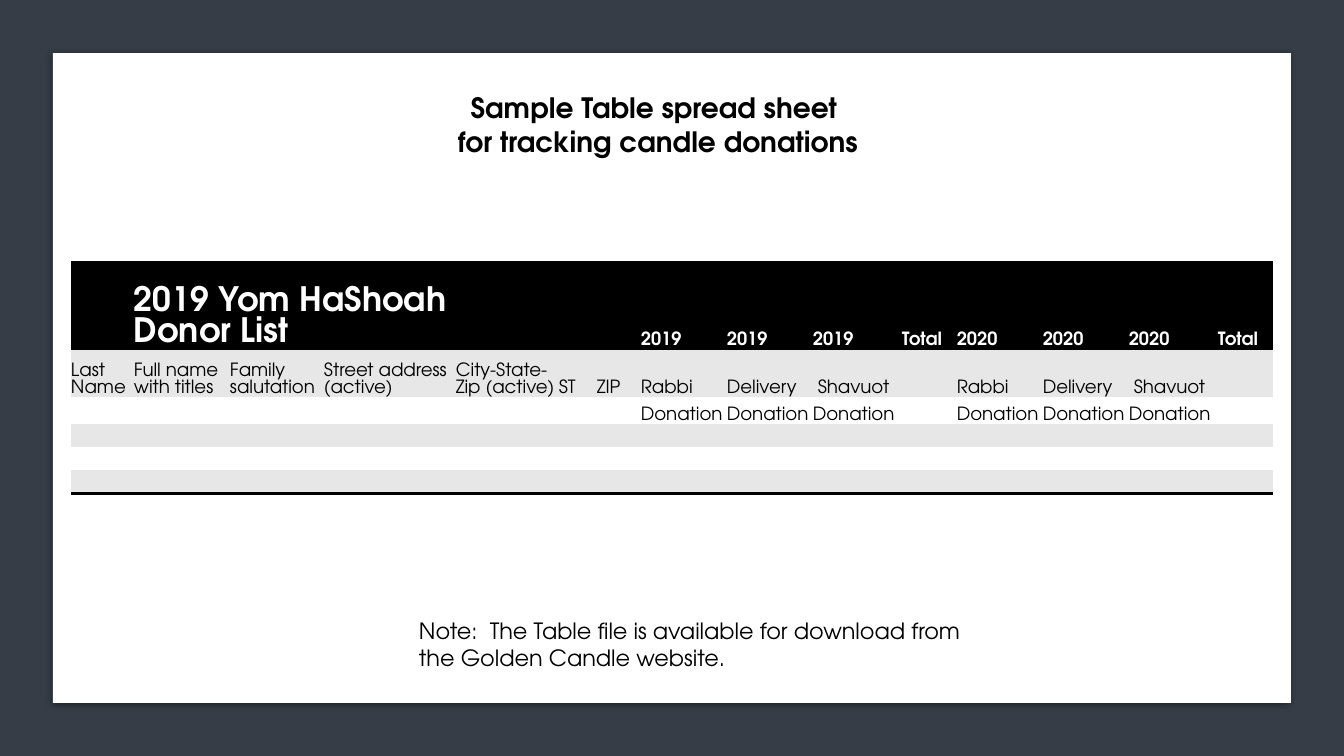
from dataclasses import dataclass

from lxml.etree import Element, SubElement
from pptx import Presentation
from pptx.dml.color import RGBColor
from pptx.enum.shapes import MSO_SHAPE as Shape
from pptx.enum.text import MSO_ANCHOR as Anchor, PP_ALIGN as Align
from pptx.oxml.ns import qn
from pptx.util import Emu, Pt


@dataclass(frozen=True)
class Theme:
    font: str = "TeX Gyre Adventor"
    background: str = "363D46"
    white: str = "FFFFFF"
    black: str = "000000"
    band: str = "E7E7E7"
    heading: int = 20
    note: int = 16
    table_title: int = 24
    cell: int = 13


THEME = Theme()
SCALE = 914400 / 100.8  # EMU in one px

# Content
HEADING = ["Sample Table spread sheet ", "for tracking candle donations"]
NOTE = ["Note:  The Table file is available for download from the Golden Candle website."]
TABLE_TITLE = "2019 Yom HaShoah Donor List"
CONTACT_COLUMNS = ["Last Name", "Full name with titles", "Family salutation",
                   "Street address (active)", "City-State-Zip (active)", "ST", "ZIP"]
YEARS = ["2019", "2020"]
GIFT_COLUMNS = ["Rabbi", "Delivery", " Shavuot", ""]
GIFT_KINDS = ["Donation", "Donation", "Donation", ""]
BLANK_ROWS = 3

# Geometry in px
SLIDE_SIZE = (1344, 756)
PANEL = (53, 53, 1238, 650)
HEADING_BOX = (430, 86, 456, 78)
NOTE_BOX = (409, 612, 573, 65)
TABLE_ORIGIN = (71, 262)
COLUMN_WIDTHS = [63, 96, 94, 132, 103, 38, 44] + [86, 86, 89, 55] * len(YEARS)
ROW_HEIGHTS = [87, 48, 27] + [23] * BLANK_ROWS
CELL_TOP_INSET = 1


def px(value):
    return Emu(round(value * SCALE))


def box(values):
    return [px(value) for value in values]


def color(value):
    return RGBColor.from_string(value)


def add_run(paragraph, text, size, ink, bold=False):
    run = paragraph.add_run()
    run.text = text
    run.font.name, run.font.size, run.font.bold = THEME.font, Pt(size), bold
    run.font.color.rgb = color(ink)


def add_text(slide, bounds, lines, size, bold=False, align=Align.LEFT):
    frame = slide.shapes.add_textbox(*box(bounds)).text_frame
    frame.word_wrap = True
    for index, line in enumerate(lines):
        paragraph = frame.add_paragraph() if index else frame.paragraphs[0]
        paragraph.alignment = align
        add_run(paragraph, line, size, THEME.black, bold)


def add_panel(slide):
    panel = slide.shapes.add_shape(Shape.RECTANGLE, *box(PANEL))
    panel.shadow.inherit = False
    panel.fill.solid()
    panel.fill.fore_color.rgb = color(THEME.white)
    panel.line.fill.background()
    effects = panel._element.spPr.find(qn("a:effectLst"))
    shadow = SubElement(effects, qn("a:outerShdw"), blurRad=str(Pt(5)),
                        dist=str(Pt(1.4)), dir="5400000", rotWithShape="0")
    tint = SubElement(shadow, qn("a:srgbClr"), val=THEME.black)
    SubElement(tint, qn("a:alpha"), val="43000")


def set_borders(cell, sides):
    properties = cell._tc.get_or_add_tcPr()
    for index, side in enumerate(sides):
        line = Element(qn(f"a:ln{side}"), w=str(Pt(2)))
        fill = SubElement(line, qn("a:solidFill"))
        SubElement(fill, qn("a:srgbClr"), val=THEME.black)
        properties.insert(index, line)


def fill_cell(cell, text, size, fill, ink, bold, borders):
    cell.fill.solid()
    cell.fill.fore_color.rgb = color(fill)
    cell.vertical_anchor = Anchor.BOTTOM
    cell.margin_left = cell.margin_right = cell.margin_bottom = 0
    cell.margin_top = px(CELL_TOP_INSET)
    set_borders(cell, borders)
    paragraph = cell.text_frame.paragraphs[0]
    if text:
        add_run(paragraph, text, size, ink, bold)
    else:
        SubElement(paragraph._p, qn("a:endParaRPr"), sz=str(THEME.cell * 100))


def table_rows():
    blanks = [""] * len(CONTACT_COLUMNS)
    title = ["", TABLE_TITLE] + blanks[2:]
    for year in YEARS:
        title += [year] * 3 + ["Total"]
    names = CONTACT_COLUMNS + GIFT_COLUMNS * len(YEARS)
    kinds = blanks + GIFT_KINDS * len(YEARS)
    return [title, names, kinds] + [[""] * len(names)] * BLANK_ROWS


def add_donor_table(slide):
    rows = table_rows()
    size = (sum(COLUMN_WIDTHS), sum(ROW_HEIGHTS))
    table = slide.shapes.add_table(len(rows), len(COLUMN_WIDTHS),
                                   *box(TABLE_ORIGIN + size)).table
    table.first_row = table.horz_banding = False
    # Plain style without grid lines
    style = table._tbl.tblPr.find(qn("a:tableStyleId"))
    style.text = "{2D5ABB26-0587-4C30-8999-92F81FD0307C}"
    for column, width in zip(table.columns, COLUMN_WIDTHS):
        column.width = px(width)
    for row, height in zip(table.rows, ROW_HEIGHTS):
        row.height = px(height)

    borders = {0: "TB", len(rows) - 1: "B"}
    for row_index, texts in enumerate(rows):
        header = row_index == 0
        band = THEME.band if row_index % 2 else THEME.white
        for column_index, text in enumerate(texts):
            fill_cell(table.cell(row_index, column_index), text,
                      THEME.table_title if text == TABLE_TITLE else THEME.cell,
                      THEME.black if header else band,
                      THEME.white if header else THEME.black,
                      header, borders.get(row_index, ""))

    # Merged title, and the third gift of the first year
    table.cell(0, 1).merge(table.cell(0, 3))
    table.cell(2, 9).merge(table.cell(2, 10))


def main():
    presentation = Presentation()
    presentation.slide_width, presentation.slide_height = box(SLIDE_SIZE)
    slide = presentation.slides.add_slide(presentation.slide_layouts[6])
    slide.background.fill.solid()
    slide.background.fill.fore_color.rgb = color(THEME.background)

    add_panel(slide)
    add_donor_table(slide)
    add_text(slide, HEADING_BOX, HEADING, THEME.heading, True, Align.CENTER)
    add_text(slide, NOTE_BOX, NOTE, THEME.note)
    presentation.save("out.pptx")


if __name__ == "__main__":
    main()
